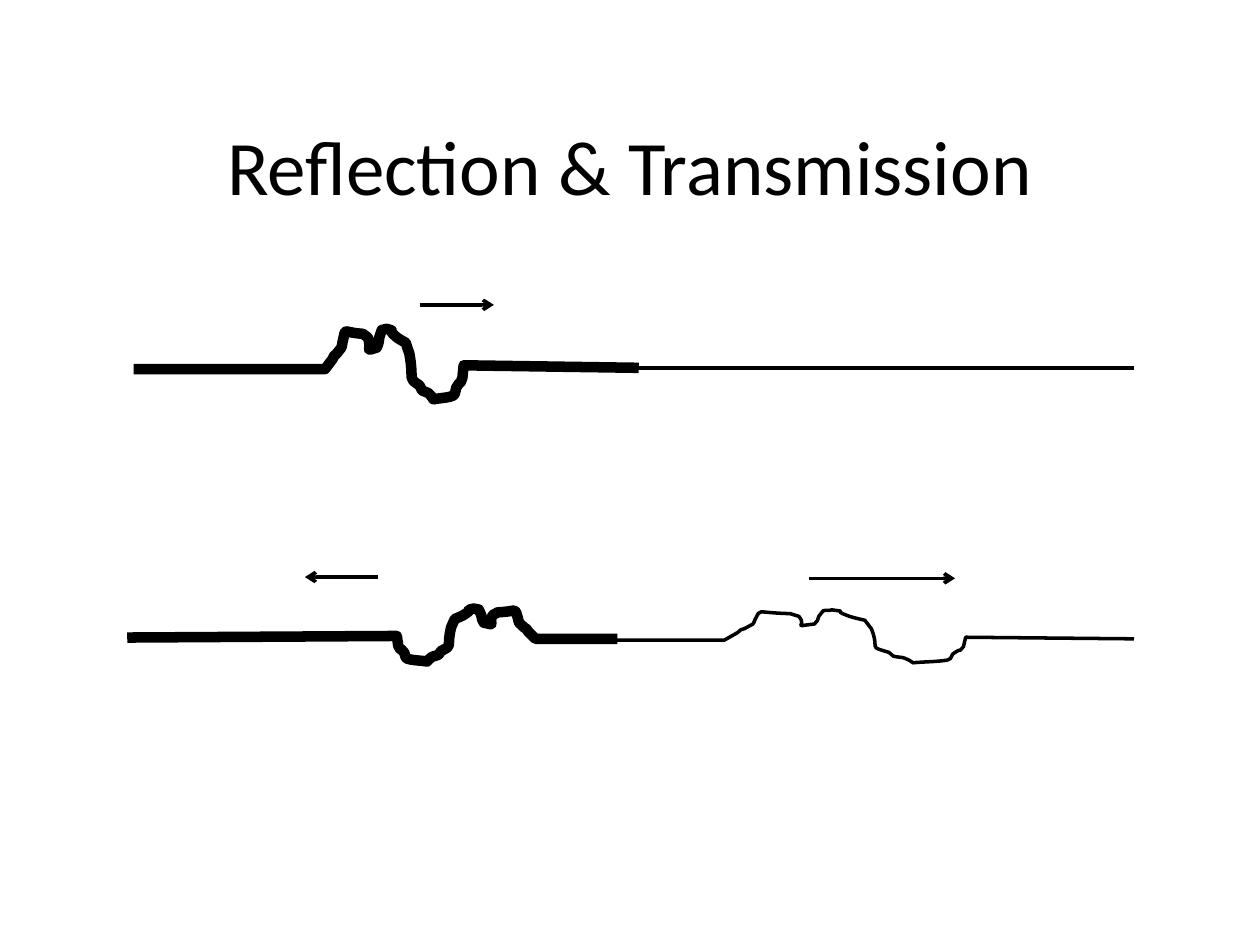
from pptx import Presentation
from pptx.dml.color import RGBColor
from pptx.enum.shapes import MSO_CONNECTOR as Connector
from pptx.enum.text import MSO_ANCHOR as Anchor, PP_ALIGN as Align
from pptx.oxml.ns import qn
from pptx.util import Inches, Pt
from lxml.etree import SubElement

BLACK = RGBColor(0, 0, 0)
HEAVY, LIGHT = 6, 2

PULSE = [
    (0.06, -0.08),
    (0.07, -0.10, 0.07, -0.11, 0.09, -0.12),
    (0.13, -0.17),
    (0.13, -0.18, 0.14, -0.20, 0.14, -0.22),
    (0.17, -0.34, 0.13, -0.29, 0.30, -0.28),
    (0.31, -0.27, 0.33, -0.26, 0.34, -0.25),
    (0.38, -0.14, 0.30, -0.14, 0.41, -0.17),
    (0.42, -0.19, 0.43, -0.22, 0.43, -0.25),
    (0.44, -0.27, 0.44, -0.29, 0.45, -0.31),
    (0.46, -0.32, 0.48, -0.31, 0.49, -0.32),
    (0.58, -0.29, 0.48, -0.33, 0.56, -0.26),
    (0.58, -0.24, 0.64, -0.21, 0.64, -0.21),
    (0.65, -0.18, 0.66, -0.15, 0.67, -0.12),
    (0.71, 0.11, 0.65, 0.06, 0.75, 0.13),
    (0.76, 0.14, 0.76, 0.16, 0.77, 0.17),
    (0.78, 0.18, 0.81, 0.18, 0.82, 0.19),
    (0.84, 0.21, 0.85, 0.22, 0.86, 0.24),
    (0.91, 0.23, 0.95, 0.23, 0.99, 0.22),
    (1.04, 0.21, 1.03, 0.19, 1.04, 0.15),
    (1.10, 0.05, 1.05, 0.17, 1.09, 0.07),
    (1.10, -0.03),
]


def add_title(shapes, title):
    """Add the centred slide title."""
    box = shapes.add_textbox(Inches(0.75), Inches(0.5), Inches(8.5), Inches(1.61))
    frame = box.text_frame
    frame.word_wrap = True
    frame.vertical_anchor = Anchor.MIDDLE
    frame.text = title
    paragraph = frame.paragraphs[0]
    paragraph.alignment = Align.CENTER
    font = paragraph.runs[0].font
    font.name, font.size, font.color.rgb = "Calibri", Pt(44), BLACK


def bend(string, segments):
    """Turn the straight pulse segments that have control points into curves."""
    left, top = min(s[-1][0] for s in segments), min(s[-1][1] for s in segments)
    steps = list(string._element.iter(qn("a:lnTo")))
    for step, (*controls, _) in zip(steps, segments[1:]):
        if controls:
            step.tag = qn("a:cubicBezTo")
        for index, (x, y) in enumerate(controls):
            point = SubElement(step, qn("a:pt"), x=str(x - left), y=str(y - top))
            step.insert(index, point)


def add_string(shapes, start, pulse, scale, end, weight):
    """Add a string that carries the pulse, stretched or mirrored by scale."""
    def place(x, y):
        return (Inches(pulse[0] + x * scale[0]), Inches(pulse[1] + y * scale[1]))

    start, end = [tuple(map(Inches, point)) for point in (start, end)]
    outline = [[place(*pair) for pair in zip(part[::2], part[1::2])] for part in PULSE]
    segments = [[start], [place(0, 0)], *outline, [end]]
    builder = shapes.build_freeform(*start)
    builder.add_line_segments([part[-1] for part in segments[1:]], close=False)
    string = builder.convert_to_shape()
    bend(string, segments)
    string.shadow.inherit = False
    string.fill.background()
    string.line.color.rgb = BLACK
    string.line.width = Pt(weight)


def add_line(shapes, start, end, arrow=False):
    """Add a light straight line, with an arrowhead at its end if asked."""
    ends = [Inches(value) for value in (*start, *end)]
    line = shapes.add_connector(Connector.STRAIGHT, *ends)
    line.line.color.rgb = BLACK
    line.line.width = Pt(LIGHT)
    if arrow:
        SubElement(line.line._get_or_add_ln(), qn("a:tailEnd"), type="arrow")
    SubElement(line._element.spPr, qn("a:effectLst"))


def main():
    """Build and save the slide."""
    deck = Presentation()
    deck.slide_width, deck.slide_height = Inches(10), Inches(7.5)
    shapes = deck.slides.add_slide(deck.slide_layouts[6]).shapes
    add_title(shapes, "Reflection & Transmission")

    add_line(shapes, (5.07, 2.92), (9, 2.92))
    add_string(shapes, (1.06, 2.93), (2.58, 2.93), (1, 1), (5.07, 2.92), HEAVY)
    add_line(shapes, (3.33, 2.42), (3.92, 2.42), arrow=True)

    reflected = shapes.add_group_shape().shapes
    add_string(reflected, (4.9, 5.07), (4.25, 5.07), (-1, 0.75), (1.01, 5.06), HEAVY)
    add_line(reflected, (3, 4.58), (2.42, 4.58), arrow=True)

    transmitted = shapes.add_group_shape().shapes
    add_string(transmitted, (4.42, 5.08), (5.75, 5.08), (1.74, 0.75), (9, 5.07), LIGHT)
    add_line(transmitted, (6.42, 4.59), (7.58, 4.59), arrow=True)

    deck.save("out.pptx")


if __name__ == "__main__":
    main()
